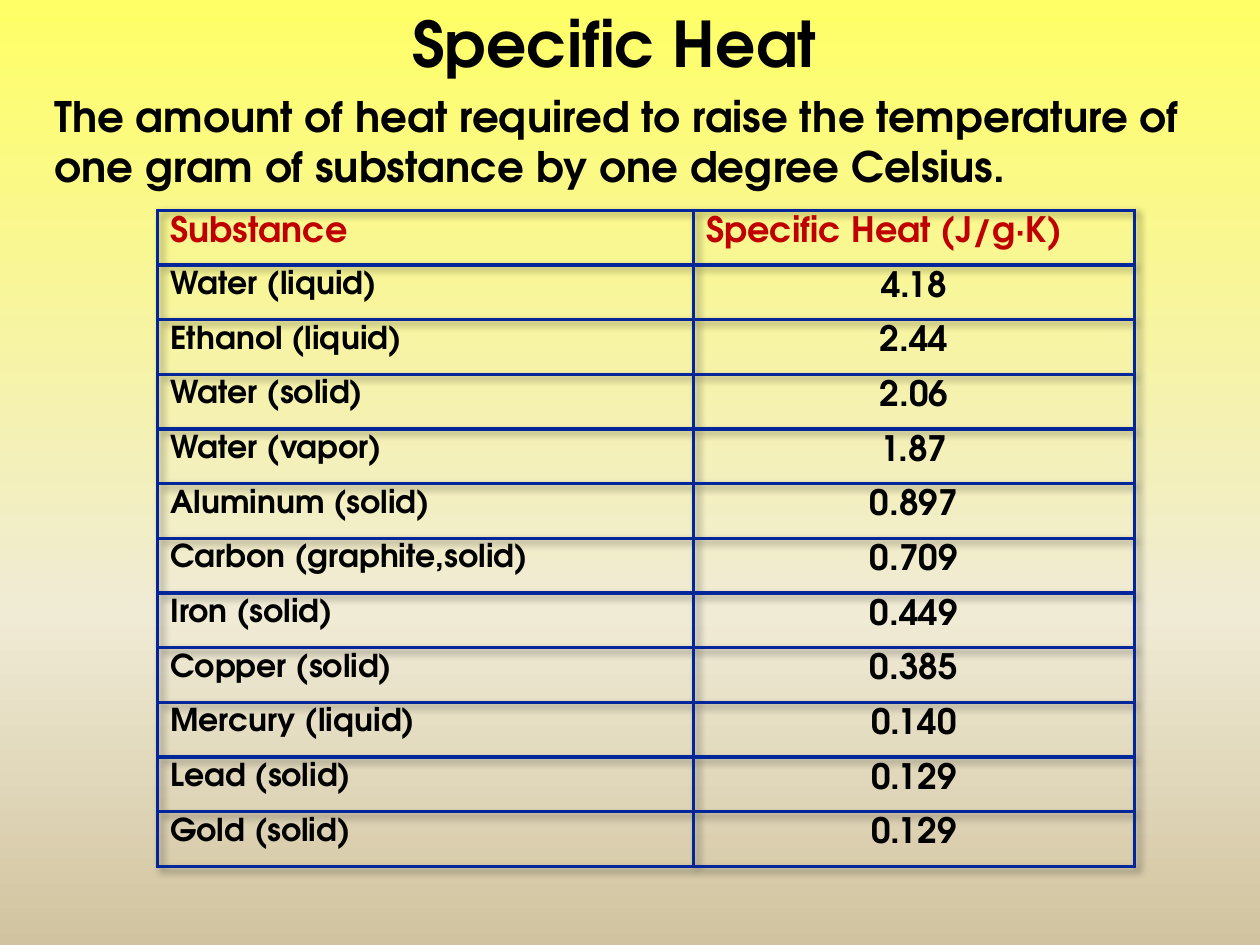
from copy import deepcopy

from lxml import etree
from pptx import Presentation
from pptx import util as u
from pptx.dml.color import RGBColor
from pptx.enum import text
from pptx.oxml import parse_xml
from pptx.oxml.ns import nsdecls, qn

FONT = "TeX Gyre Adventor"
BLACK = RGBColor(0x00, 0x00, 0x00)
RED = RGBColor(0xC0, 0x00, 0x00)
BLUE = RGBColor(0x00, 0x26, 0x99)
BACKGROUND_STOPS = [
    (0, RGBColor(0xFF, 0xFF, 0x66)),
    (0.65, RGBColor(0xF0, 0xEB, 0xD5)),
    (1, RGBColor(0xD1, 0xC3, 0x9F)),
]
HEADINGS = ("Substance", "Specific Heat (J/g·K)")
SPECIFIC_HEATS = [
    ("Water (liquid)", "4.18"),
    ("Ethanol (liquid)", "2.44"),
    ("Water (solid)", "2.06"),
    ("Water (vapor)", "1.87"),
    ("Aluminum (solid)", "0.897"),
    ("Carbon (graphite,solid)", "0.709"),
    ("Iron (solid)", "0.449"),
    ("Copper (solid)", "0.385"),
    ("Mercury (liquid)", "0.140"),
    ("Lead (solid)", "0.129"),
    ("Gold (solid)", "0.129"),
]
COLUMN_WIDTHS = (10.8, 8.89)
ROW_HEIGHT = 1.1


def write(frame, words, size, color=BLACK, align=text.PP_ALIGN.LEFT):
    frame.text = words
    para = frame.paragraphs[0]
    para.alignment = align
    para.font.name = FONT
    para.font.size = u.Pt(size)
    para.font.bold = True
    para.font.color.rgb = color


def place(box, left, top, width, height):
    box.left, box.top = u.Cm(left), u.Cm(top)
    box.width, box.height = u.Cm(width), u.Cm(height)


def paint_background(page):
    fill = page.background.fill
    fill.gradient()
    fill.gradient_angle = 270
    stop_list = page.element.find(".//" + qn("a:gsLst"))
    stop_list.insert(1, deepcopy(stop_list[0]))
    for stop, (position, color) in zip(fill.gradient_stops, BACKGROUND_STOPS):
        stop.position = position
        stop.color.rgb = color


def add_title(page, words):
    title = page.shapes.title
    place(title, 6.35, 0, 12.07, 1.7)
    write(title.text_frame, words, 36, align=text.PP_ALIGN.CENTER)
    title.text_frame.auto_size = text.MSO_AUTO_SIZE.NONE
    title.text_frame.vertical_anchor = text.MSO_ANCHOR.MIDDLE


def add_definition(page, words):
    box = page.shapes.add_textbox(u.Cm(0.85), u.Cm(1.7), u.Cm(24.13), u.Cm(2.31))
    box.text_frame.word_wrap = True
    write(box.text_frame, words, 24)


def outline_cell(cell):
    properties = cell._tc.get_or_add_tcPr()
    for side in ("lnL", "lnR", "lnT", "lnB"):
        line = etree.SubElement(properties, qn(f"a:{side}"), w=str(u.Pt(2.25)))
        solid = etree.SubElement(line, qn("a:solidFill"))
        etree.SubElement(solid, qn("a:srgbClr"), val=str(BLUE))
    cell.fill.background()


def add_table_shadow(table):
    table._tbl.tblPr.insert(0, parse_xml(
        f'<a:effectLst {nsdecls("a")}>'
        '<a:outerShdw blurRad="50800" dist="38100" dir="2700000" algn="tl">'
        '<a:srgbClr val="000000"><a:alpha val="40000"/></a:srgbClr>'
        '</a:outerShdw></a:effectLst>'))


def add_heat_table(page):
    rows = [HEADINGS] + SPECIFIC_HEATS
    table = page.shapes.add_table(
        len(rows), len(HEADINGS), u.Cm(3.18), u.Cm(4.24),
        u.Cm(sum(COLUMN_WIDTHS)), u.Cm(ROW_HEIGHT * len(rows))).table
    table.first_row = table.horz_banding = False
    add_table_shadow(table)
    for column, width in zip(table.columns, COLUMN_WIDTHS):
        column.width = u.Cm(width)
    for row, (substance, heat) in zip(table.rows, rows):
        row.height = u.Cm(ROW_HEIGHT)
        name_cell, heat_cell = row.cells
        if substance == HEADINGS[0]:
            write(name_cell.text_frame, substance, 20, RED)
            write(heat_cell.text_frame, heat, 20, RED)
        else:
            write(name_cell.text_frame, substance, 18)
            write(heat_cell.text_frame, heat, 20, align=text.PP_ALIGN.CENTER)
        for cell in row.cells:
            outline_cell(cell)


def main():
    deck = Presentation()
    deck.slide_width, deck.slide_height = u.Cm(25.4), u.Cm(19.05)
    page = deck.slides.add_slide(deck.slide_layouts.get_by_name("Title Only"))
    paint_background(page)
    add_title(page, "Specific Heat")
    add_definition(page, "The amount of heat required to raise the temperature of "
                         "one gram of substance by one degree Celsius.")
    add_heat_table(page)
    deck.save("out.pptx")


if __name__ == "__main__":
    main()
